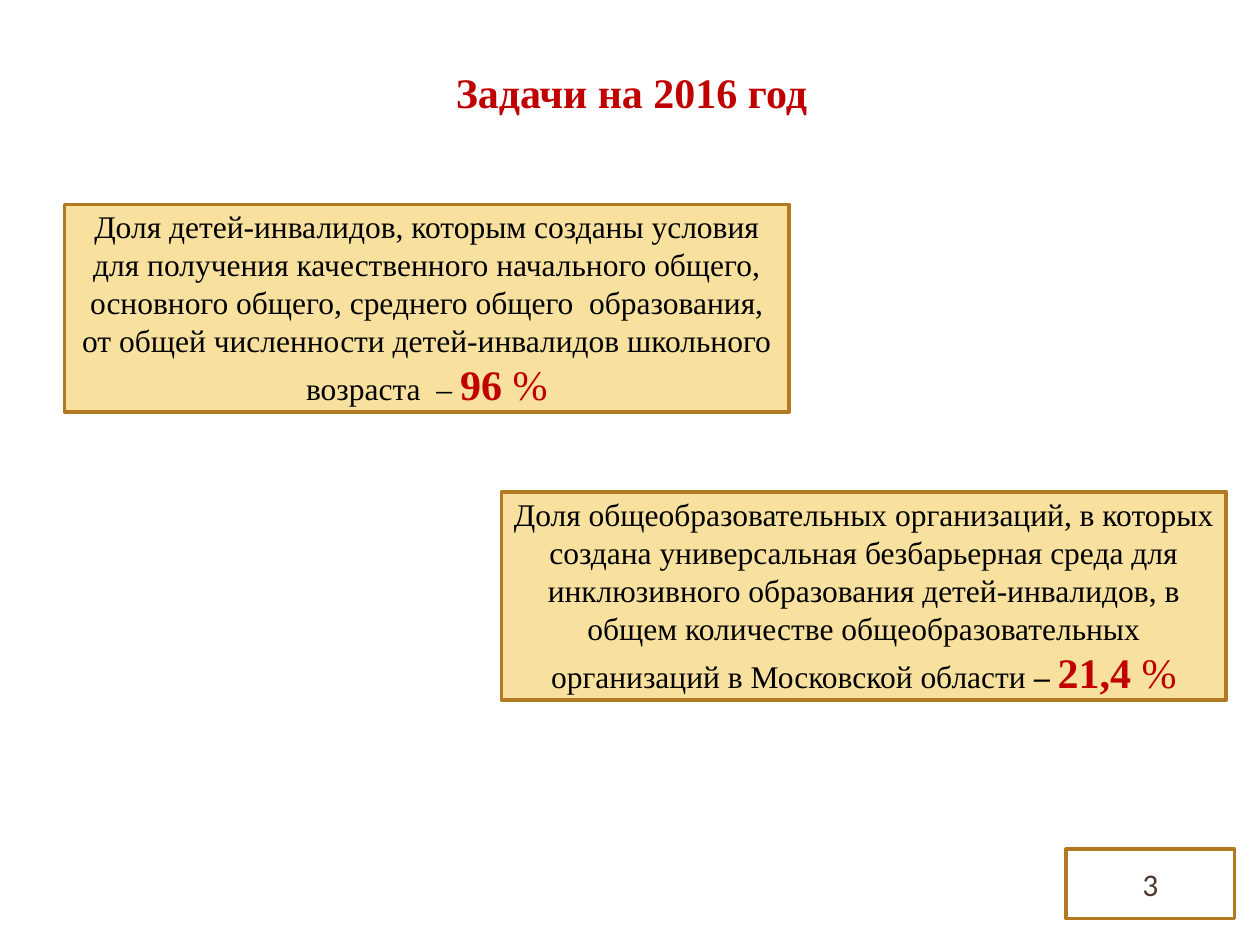
from pptx import Presentation
from pptx.dml.color import RGBColor
from pptx.enum.shapes import MSO_SHAPE
from pptx.enum.text import MSO_ANCHOR, PP_ALIGN
from pptx.util import Cm, Pt

RECTANGLE = MSO_SHAPE.RECTANGLE
MIDDLE = MSO_ANCHOR.MIDDLE
CENTER = PP_ALIGN.CENTER

RED = RGBColor(0xC0, 0x00, 0x00)
BLACK = RGBColor(0x00, 0x00, 0x00)
WHITE = RGBColor(0xFF, 0xFF, 0xFF)
SAND = RGBColor(0xF8, 0xE1, 0x9F)
OCHRE = RGBColor(0xB2, 0x78, 0x22)
BROWN = RGBColor(0x4E, 0x3B, 0x30)

SERIF = "Times New Roman"
SANS = "Calibri"
TITLE_ONLY = 5
CARD_SIZE = (Cm(14.61), Cm(4.19))

GOALS = [
    ((Cm(1.3), Cm(4.12)), [
        ("Доля детей-инвалидов, которым созданы условия для получения "
         "качественного начального общего, основного общего, среднего общего  "
         "образования, от общей численности детей-инвалидов школьного "
         "возраста  – ", 18, BLACK, False),
        ("96 ", 24, RED, True),
        ("%", 24, RED, False),
    ]),
    ((Cm(10.11), Cm(9.92)), [
        ("Доля общеобразовательных организаций, в которых создана "
         "универсальная безбарьерная среда для инклюзивного образования "
         "детей-инвалидов, в общем количестве общеобразовательных "
         "организаций в Московской области ", 18, BLACK, False),
        ("– ", 18, BLACK, True),
        ("21,4 ", 24, RED, True),
        ("%", 24, RED, False),
    ]),
]


def add_title(page, left, top, width, height):
    title = page.shapes.title
    title.left, title.top, title.width, title.height = left, top, width, height
    title.text_frame.vertical_anchor = MIDDLE
    para = title.text_frame.paragraphs[0]
    para.text = "Задачи на 2016 год"
    para.alignment = CENTER
    para.font.name = SERIF
    para.font.size = Pt(24)
    para.font.bold = True
    para.font.color.rgb = RED


def add_framed_box(page, left, top, width, height, fill, font_name, spans):
    box = page.shapes.add_shape(RECTANGLE, left, top, width, height)
    box.shadow.inherit = False
    box.fill.solid()
    box.fill.fore_color.rgb = fill
    box.line.color.rgb = OCHRE
    box.line.width = Pt(2)
    frame = box.text_frame
    frame.word_wrap = True
    frame.vertical_anchor = MIDDLE
    para = frame.paragraphs[0]
    para.alignment = CENTER
    para.font.name = font_name
    for text, size, color, bold in spans:
        span = para.add_run()
        span.text = text
        span.font.name = font_name
        span.font.size = Pt(size)
        span.font.bold = bold
        span.font.color.rgb = color


def main():
    deck = Presentation()
    deck.slide_width, deck.slide_height = Cm(25.4), Cm(19.05)
    page = deck.slides.add_slide(deck.slide_layouts[TITLE_ONLY])
    add_title(page, Cm(1.3), Cm(0.74), Cm(22.86), Cm(2.21))
    for position, spans in GOALS:
        add_framed_box(page, *position, *CARD_SIZE, SAND, SERIF, spans)
    add_framed_box(page, Cm(21.49), Cm(17.12), Cm(3.4), Cm(1.4),
                   WHITE, SANS, [("3", 18, BROWN, False)])
    deck.save("out.pptx")


if __name__ == "__main__":
    main()
